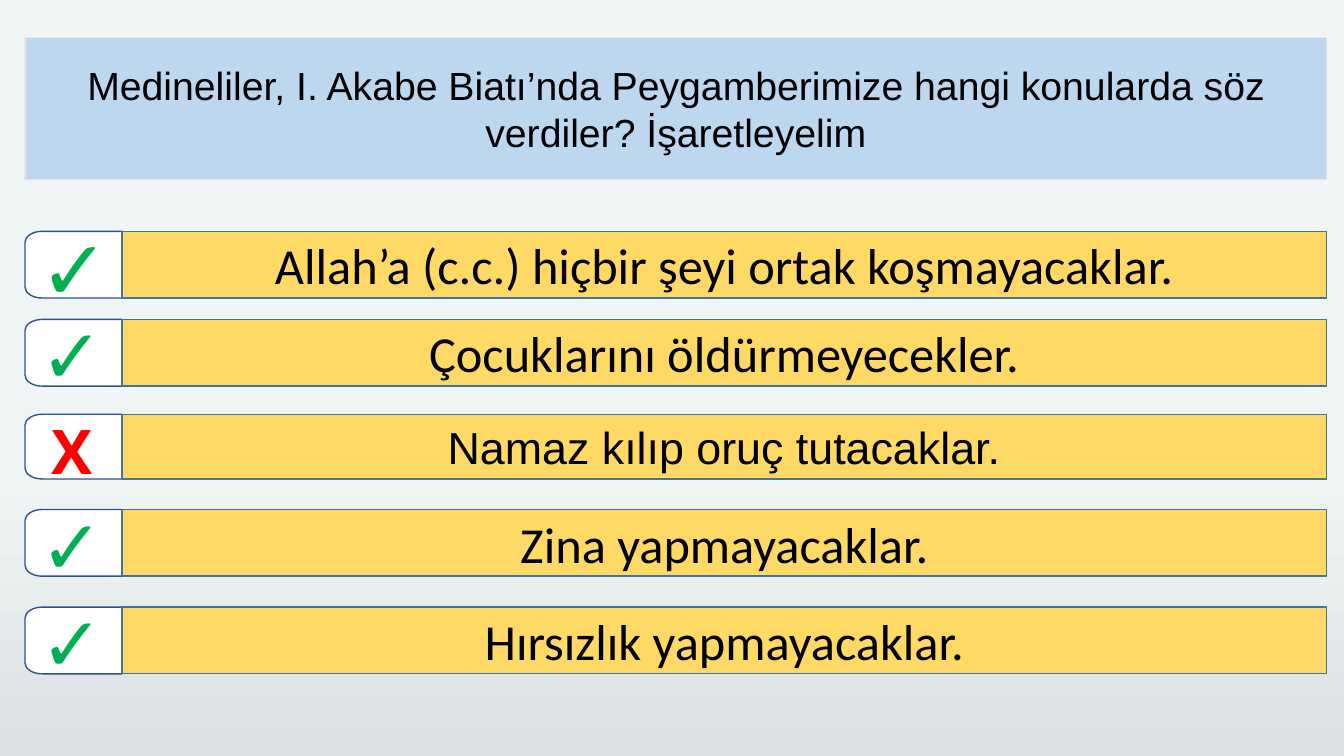
from collections import namedtuple

from lxml import etree
from pptx import Presentation
from pptx.dml.color import RGBColor
from pptx.enum.shapes import MSO_SHAPE
from pptx.enum.text import MSO_ANCHOR, MSO_AUTO_SIZE, PP_ALIGN
from pptx.oxml.ns import qn
from pptx.util import Cm, Pt

RECTANGLE = MSO_SHAPE.RECTANGLE
MIDDLE, TOP = MSO_ANCHOR.MIDDLE, MSO_ANCHOR.TOP
CENTER = PP_ALIGN.CENTER
NO_FIT, GROW = MSO_AUTO_SIZE.NONE, MSO_AUTO_SIZE.SHAPE_TO_FIT_TEXT

COLORS = {
    "sky": "EFF4F5",
    "mist": "DCE1E4",
    "question": "BDD7EE",
    "question_line": "E7E6E6",
    "answer": "FFD966",
    "answer_line": "43739E",
    "tab": "FFFFFF",
    "tab_line": "2F528F",
    "text": "000000",
    "right": "00B050",
    "wrong": "FF0000",
}

Box = namedtuple("Box", "left top width height")
Mark = namedtuple("Mark", "symbol font size color width height shift drop wrap")
Answer = namedtuple("Answer", "text font size top height mark")

LARGE_TICK = Mark("✓", "Roboto Slab", 60, "right", 3.63, 2.82, 0.02, 0.06, True)
TICK = Mark("✓", "Roboto Slab", 54, "right", 3.63, 2.57, -0.03, 0.04, True)
CROSS = Mark("X", "Open Sans", 44, "wrong", 1.55, 2.13, -0.05, 0.1, False)

SLIDE = Box(0, 0, 33.87, 19.05)
LEFT, WIDTH = 0.63, 32.8
TAB_WIDTH = 2.45
RADIUS_X, RADIUS_Y = 0.43, 0.28
CURVE = 0.55
QUESTION = "Medineliler, I. Akabe Biatı’nda Peygamberimize hangi konularda söz verdiler? İşaretleyelim"
ANSWERS = [
    Answer("Allah’a (c.c.) hiçbir şeyi ortak koşmayacaklar.", "Calibri", 36, 5.83, 1.68, LARGE_TICK),
    Answer("Çocuklarını öldürmeyecekler.", "Calibri", 36, 8.05, 1.68, TICK),
    Answer("Namaz kılıp oruç tutacaklar.", "Arial", 32, 10.44, 1.63, CROSS),
    Answer("Zina yapmayacaklar.", "Calibri", 36, 12.84, 1.68, TICK),
    Answer("Hırsızlık yapmayacaklar.", "Calibri", 36, 15.3, 1.68, TICK),
]


def color(name):
    return RGBColor.from_string(COLORS[name])


def paint(shape, fill, line):
    shape.shadow.inherit = False
    shape.fill.solid()
    shape.fill.fore_color.rgb = color(fill)
    shape.line.color.rgb = color(line)
    shape.line.width = Pt(1)


def write(shape, text, font, size, text_color="text", bold=False,
          anchor=MIDDLE, wrap=True, fit=NO_FIT):
    frame = shape.text_frame
    frame.text = text
    frame.word_wrap = wrap
    frame.vertical_anchor = anchor
    frame.auto_size = fit
    paragraph = frame.paragraphs[0]
    paragraph.alignment = CENTER
    paragraph.font.name = font
    paragraph.font.size = Pt(size)
    paragraph.font.bold = bold
    paragraph.font.color.rgb = color(text_color)


def add_backdrop(slide, box):
    shape = slide.shapes.add_shape(RECTANGLE, *map(Cm, box))
    shape.shadow.inherit = False
    shape.line.fill.background()
    shape.fill.gradient()
    shape.fill.gradient_angle = 270
    for stop, name, position in zip(shape.fill.gradient_stops, ("sky", "mist"), (0.62, 1)):
        stop.color.rgb = color(name)
        stop.position = position
    slide.shapes.title.element.addprevious(shape.element)


def add_question(slide, box):
    title = slide.shapes.title
    title.left, title.top, title.width, title.height = map(Cm, box)
    paint(title, "question", "question_line")
    write(title, QUESTION, "Arial", 28)


def point_of(segment):
    point = segment.find(qn("a:pt"))
    return int(point.get("x")), int(point.get("y"))


def round_corner(start, segment, corner):
    ends = [point_of(start), point_of(segment)]
    controls = [tuple(round(a + CURVE * (b - a)) for a, b in zip(end, corner)) for end in ends]
    curve = etree.Element(qn("a:cubicBezTo"))
    for x, y in controls + ends[1:]:
        etree.SubElement(curve, qn("a:pt"), x=str(x), y=str(y))
    segment.getparent().replace(segment, curve)


def add_tab(slide, box):
    right, bottom = box.left + box.width, box.top + box.height
    inner = box.left + RADIUS_X
    outline = [
        (inner, box.top), (right, box.top), (right, bottom), (inner, bottom),
        (box.left, bottom - RADIUS_Y), (box.left, box.top + RADIUS_Y), (inner, box.top),
    ]
    points = [(Cm(x), Cm(y)) for x, y in outline]
    builder = slide.shapes.build_freeform(*points[0])
    builder.add_line_segments(points[1:], close=True)
    shape = builder.convert_to_shape()
    segments = list(shape.element.iter(qn("a:lnTo")))
    round_corner(segments[2], segments[3], (0, point_of(segments[2])[1]))
    round_corner(segments[4], segments[5], (0, 0))
    paint(shape, "tab", "tab_line")


def add_mark(slide, box, mark):
    left = box.left + (box.width - mark.width) / 2 + mark.shift
    top = box.top + (box.height - mark.height) / 2 + mark.drop
    shape = slide.shapes.add_textbox(Cm(left), Cm(top), Cm(mark.width), Cm(mark.height))
    write(shape, mark.symbol, mark.font, mark.size, mark.color, True, TOP, mark.wrap, GROW)


def add_answer(slide, box, answer):
    tab = box._replace(width=TAB_WIDTH)
    bar = box._replace(left=box.left + TAB_WIDTH, width=box.width - TAB_WIDTH)
    add_tab(slide, tab)
    shape = slide.shapes.add_shape(RECTANGLE, *map(Cm, bar))
    paint(shape, "answer", "answer_line")
    write(shape, answer.text, answer.font, answer.size)
    add_mark(slide, tab, answer.mark)


def main():
    presentation = Presentation()
    presentation.slide_width, presentation.slide_height = Cm(SLIDE.width), Cm(SLIDE.height)
    slide = presentation.slides.add_slide(presentation.slide_layouts.get_by_name("Title Only"))
    add_backdrop(slide, SLIDE)
    add_question(slide, Box(LEFT, 0.95, WIDTH, 3.58))
    for answer in ANSWERS:
        add_answer(slide, Box(LEFT, answer.top, WIDTH, answer.height), answer)
    presentation.save("out.pptx")


if __name__ == "__main__":
    main()
